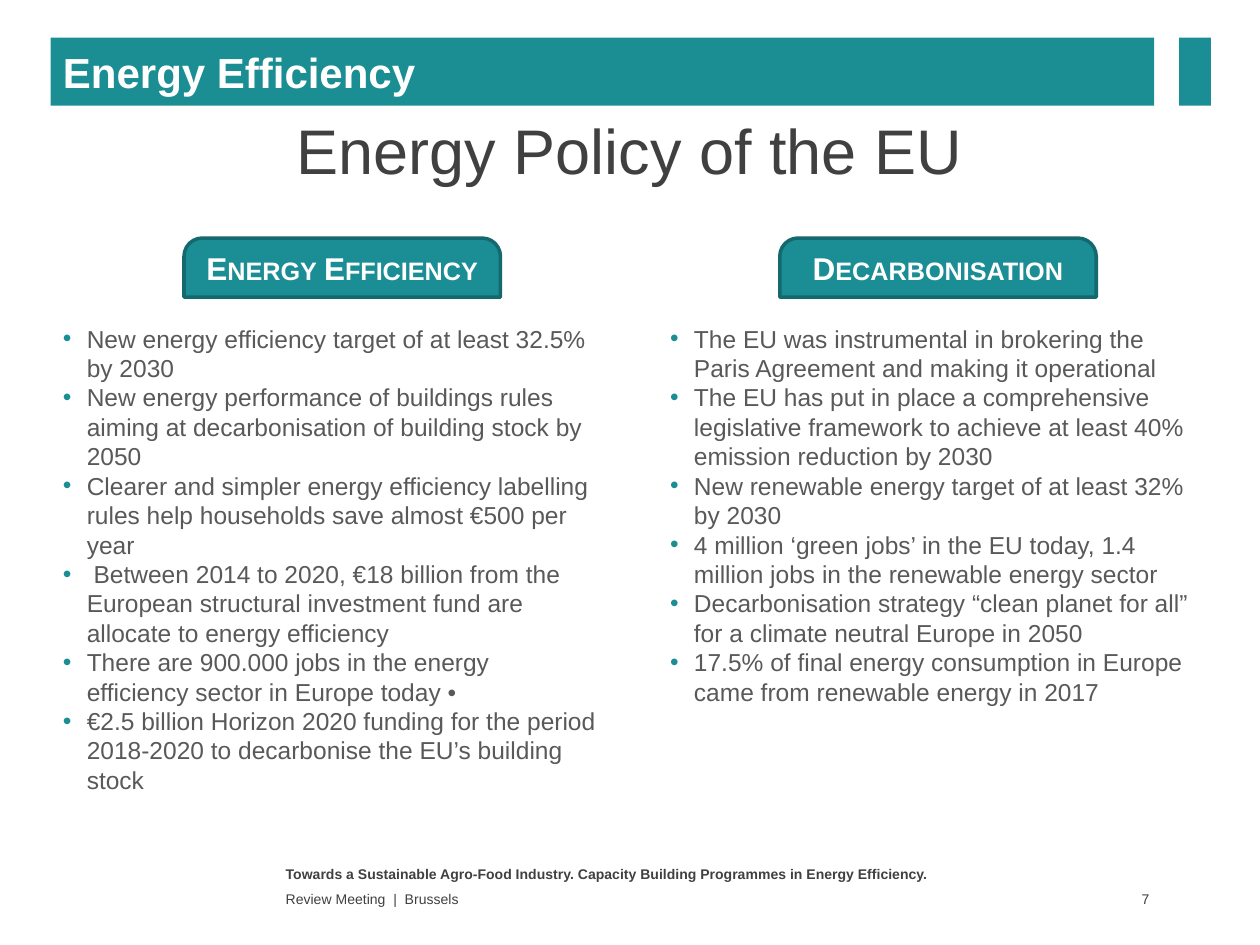
from lxml.etree import SubElement
from pptx import Presentation
from pptx.dml.color import RGBColor
from pptx.enum.shapes import MSO_SHAPE as Shape
from pptx.enum.text import MSO_ANCHOR as Anchor, MSO_AUTO_SIZE as AutoSize, PP_ALIGN as Align
from pptx.oxml.ns import qn
from pptx.util import Cm, Pt

TEAL = "1B8E95"
BANNER_TEAL = "1B8E94"
DARK_TEAL = "14696E"
WHITE = "FFFFFF"
DARK_GREY = "404040"
GREY = "595959"

COLUMNS = [
    (1.02, 3.71, 9.83, "Energy Efficiency", [
        "New energy efficiency target of at least 32.5% by 2030",
        "New energy performance of buildings rules aiming at decarbonisation of building stock by 2050",
        "Clearer and simpler energy efficiency labelling rules help households save almost €500 per year",
        " Between 2014 to 2020, €18 billion from the European structural investment fund are allocate to energy efficiency",
        "There are 900.000 jobs in the energy efficiency sector in Europe today •",
        "€2.5 billion Horizon 2020 funding for the period 2018-2020 to decarbonise the EU’s building stock",
    ]),
    (13.26, 15.72, 8.03, "Decarbonisation", [
        "The EU was instrumental in brokering the Paris Agreement and making it operational",
        "The EU has put in place a comprehensive legislative framework to achieve at least 40% emission reduction by 2030",
        "New renewable energy target of at least 32% by 2030",
        "4 million ‘green jobs’ in the EU today, 1.4 million jobs in the renewable energy sector",
        "Decarbonisation strategy “clean planet for all” for a climate neutral Europe in 2050",
        "17.5% of final energy consumption in Europe came from renewable energy in 2017",
    ]),
]


def rgb(value):
    return RGBColor.from_string(value)


def add_run(paragraph, text, size, color, bold=False):
    run = paragraph.add_run()
    run.text = text
    run.font.name = "Arial"
    run.font.size = Pt(size)
    run.font.bold = bold
    run.font.color.rgb = rgb(color)
    return run


def add_block(slide, kind, left, top, width, height, fill, outline=None):
    block = slide.shapes.add_shape(kind, Cm(left), Cm(top), Cm(width), Cm(height))
    block.shadow.inherit = False
    block.fill.solid()
    block.fill.fore_color.rgb = rgb(fill)
    if outline:
        block.line.color.rgb = rgb(outline)
        block.line.width = Pt(2)
    else:
        block.line.fill.background()
    return block


def add_frame(slide, left, top, width, height, anchor=Anchor.TOP):
    frame = slide.shapes.add_textbox(Cm(left), Cm(top), Cm(width), Cm(height)).text_frame
    frame.word_wrap = True
    frame.vertical_anchor = anchor
    return frame


def add_line(frame, text, size, color, bold=False, align=Align.LEFT):
    paragraph = frame.paragraphs[0]
    paragraph.alignment = align
    return add_run(paragraph, text, size, color, bold)


def add_bullet(paragraph, text):
    properties = paragraph._p.get_or_add_pPr()
    properties.set("marL", str(Cm(0.48)))
    properties.set("indent", str(-Cm(0.48)))
    bullet_color = SubElement(properties, qn("a:buClr"))
    SubElement(bullet_color, qn("a:srgbClr")).set("val", BANNER_TEAL)
    SubElement(properties, qn("a:buFont")).set("typeface", "Arial")
    SubElement(properties, qn("a:buChar")).set("char", "•")
    add_run(paragraph, text, 14, GREY)


def add_header(slide, left, top, width, height):
    accent_width = 0.64
    banner = add_block(slide, Shape.RECTANGLE, left, top, width - 1.11, height, BANNER_TEAL)
    banner.text_frame.vertical_anchor = Anchor.MIDDLE
    add_line(banner.text_frame, "Energy Efficiency", 24, WHITE, bold=True)
    add_block(slide, Shape.RECTANGLE, left + width - accent_width + 0.03, top,
              accent_width, height, TEAL)


def add_title(slide, left, top, width, height):
    title = add_frame(slide, left, top, width, height, Anchor.MIDDLE)
    add_line(title, "Energy Policy of the EU", 36, DARK_GREY, align=Align.CENTER)


def add_tab(slide, left, top, width, height, heading):
    tab = add_block(slide, Shape.ROUND_2_SAME_RECTANGLE, left, top, width, height,
                    TEAL, DARK_TEAL)
    tab.adjustments[0] = 0.31
    label = add_frame(slide, left, top + 0.1, width, height - 0.17)
    label.auto_size = AutoSize.SHAPE_TO_FIT_TEXT
    run = add_line(label, heading, 18, WHITE, bold=True, align=Align.CENTER)
    run._r.get_or_add_rPr().set("cap", "small")


def add_points(slide, left, top, width, height, points):
    frame = add_frame(slide, left, top, width, height)
    frame.auto_size = AutoSize.SHAPE_TO_FIT_TEXT
    for index, point in enumerate(points):
        add_bullet(frame.add_paragraph() if index else frame.paragraphs[0], point)


def add_footer(slide, left, top, width, height):
    line_height = 0.5
    second_top = top + height - line_height
    project = add_frame(slide, left, top, 13.97, line_height)
    add_line(project, "Towards a Sustainable Agro-Food Industry. "
             "Capacity Building Programmes in Energy Efficiency.", 8, DARK_GREY, bold=True)
    event = add_frame(slide, left, second_top, 13.97, line_height, Anchor.MIDDLE)
    add_line(event, "Review Meeting  |  Brussels", 8, DARK_GREY)
    number_width = 1.42
    number = add_frame(slide, left + width - number_width, second_top,
                       number_width, line_height, Anchor.MIDDLE)
    number.margin_right = Cm(0.1)
    add_line(number, "7", 8, DARK_GREY, align=Align.RIGHT)


def main():
    deck = Presentation()
    deck.slide_width, deck.slide_height = Cm(25.4), Cm(19.05)
    slide = deck.slides.add_slide(deck.slide_layouts[6])
    add_footer(slide, 5.51, 17.32, 17.76, 1.05)
    add_header(slide, 1.02, 0.76, 23.36, 1.37)
    add_title(slide, 1.02, 2.62, 23.34, 0.79)
    for left, tab_left, height, heading, points in COLUMNS:
        add_tab(slide, tab_left, 4.8, 6.38, 1.19, heading)
        add_points(slide, left, 6.4, 11.28, height, points)
    deck.save("out.pptx")


if __name__ == "__main__":
    main()
